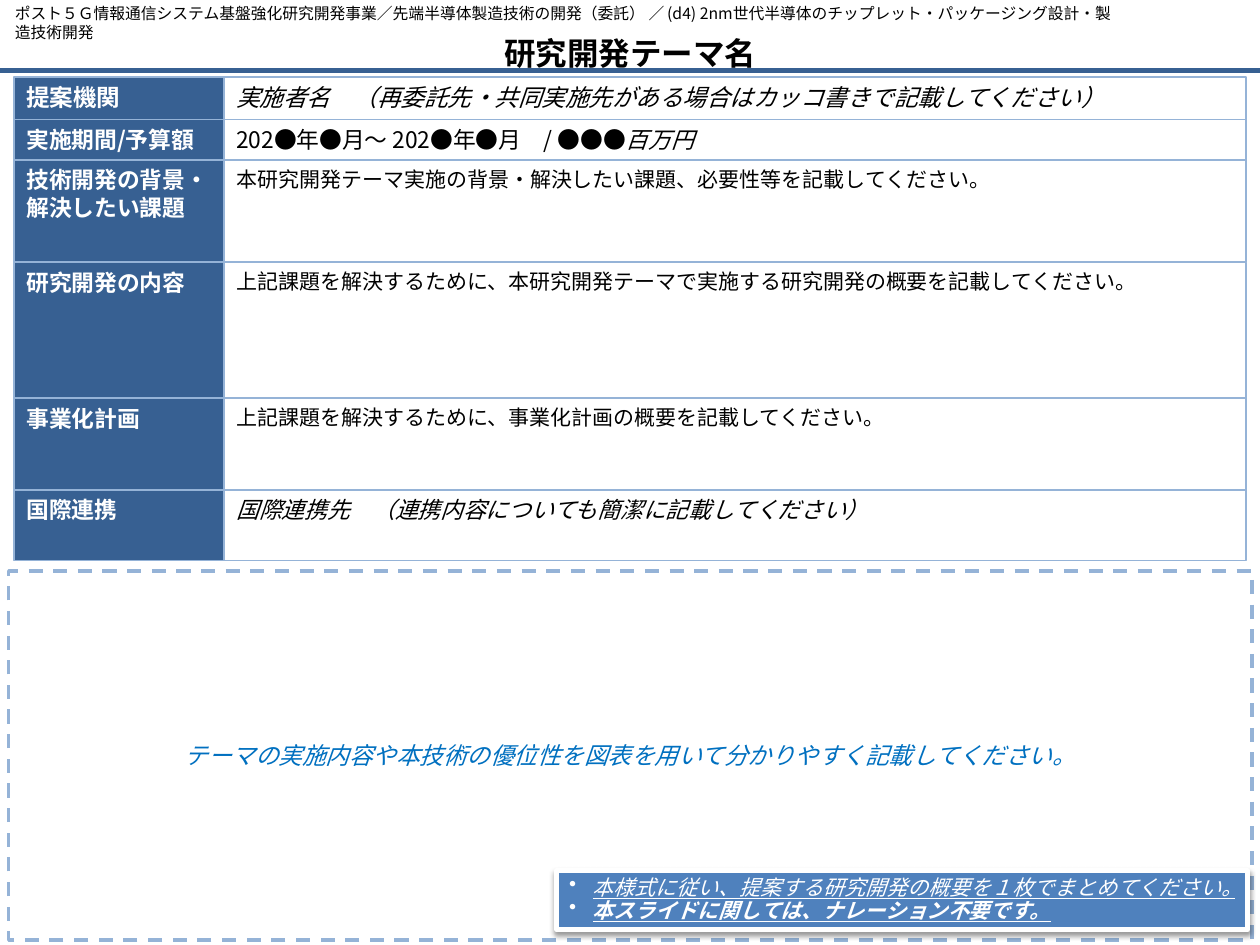
from dataclasses import dataclass

from lxml.etree import SubElement
from pptx import Presentation
from pptx.dml.color import RGBColor
from pptx.enum.dml import MSO_LINE
from pptx.enum.shapes import MSO_CONNECTOR, MSO_SHAPE
from pptx.enum.text import MSO_ANCHOR, PP_ALIGN
from pptx.oxml import parse_xml
from pptx.oxml.ns import nsdecls, qn
from pptx.util import Pt


@dataclass(frozen=True)
class Theme:
    navy: str = "376092"
    pale_blue: str = "95B3D7"
    note_blue: str = "4F81BD"
    hint_blue: str = "0070C0"
    black: str = "000000"
    white: str = "FFFFFF"
    font: str = "Noto Sans CJK JP"
    note_font: str = "Arial"
    title: float = 18
    large: float = 13.5
    label: float = 13
    body: float = 12
    program: float = 9


THEME = Theme()

# Label, value runs as (text, italic), row height, label size, value size
ROWS = [
    ("提案機関", [("実施者名\u3000（再委託先・共同実施先がある場合はカッコ書きで記載してください）", True)],
     24.4, THEME.large, THEME.large),
    ("実施期間/予算額", [("202●年●月～ 202●年●月\u3000/ ●●●", False), ("百万円", True)],
     23, THEME.label, THEME.label),
    ("技術開発の背景・解決したい課題",
     [("本研究開発テーマ実施の背景・解決したい課題、必要性等を記載してください。", False)],
     58.4, THEME.label, THEME.body),
    ("研究開発の内容",
     [("上記課題を解決するために、本研究開発テーマで実施する研究開発の概要を記載してください。", False)],
     77.7, THEME.label, THEME.body),
    ("事業化計画", [("上記課題を解決するために、事業化計画の概要を記載してください。", False)],
     52.5, THEME.label, THEME.body),
    ("国際連携", [("国際連携先\u3000（連携内容についても簡潔に記載してください）", True)],
     40.4, THEME.label, THEME.label),
]
NOTES = [("本様式に従い、提案する研究開発の概要を１枚でまとめてください。", False),
         ("本スライドに関しては、ナレーション不要です。", True)]


def rgb(color):
    return RGBColor.from_string(color)


def style(paragraph, size, color, align=PP_ALIGN.LEFT, face=THEME.font, **flags):
    paragraph.alignment = align
    font = paragraph.font
    font.name, font.size = face, Pt(size)
    font.color.rgb = rgb(color)
    for flag, value in flags.items():
        setattr(font, flag, value)
    # East Asian typeface beside the Latin one
    properties = paragraph._p.pPr.find(qn("a:defRPr"))
    SubElement(properties, qn("a:ea")).set("typeface", THEME.font)


def add_box(slide, x, y, w, h, line, weight, fill=None, anchor=MSO_ANCHOR.TOP):
    box = slide.shapes.add_shape(MSO_SHAPE.RECTANGLE, Pt(x), Pt(y), Pt(w), Pt(h))
    box.shadow.inherit = False
    if fill:
        box.fill.solid()
        box.fill.fore_color.rgb = rgb(fill)
    else:
        box.fill.background()
    box.line.color.rgb = rgb(line)
    box.line.width = Pt(weight)
    box.text_frame.word_wrap = True
    box.text_frame.vertical_anchor = anchor
    return box


def add_header(slide, x, y, w):
    # Programme name
    program = slide.shapes.add_textbox(Pt(x + 1.4), Pt(y - 1.4), Pt(641.5), Pt(18)).text_frame
    program.word_wrap = True
    program.text = ("ポスト５Ｇ情報通信システム基盤強化研究開発事業／先端半導体製造技術の開発（委託） ／ "
                    "(d4) 2nm世代半導体のチップレット・パッケージング設計・製造技術開発")
    style(program.paragraphs[0], THEME.program, THEME.black)

    # Theme title
    title = slide.shapes.title
    title.left, title.top, title.width, title.height = Pt(x), Pt(y + 16), Pt(w), Pt(28.8)
    title.text_frame.text = "研究開発テーマ名"
    title.text_frame.vertical_anchor = MSO_ANCHOR.MIDDLE
    style(title.text_frame.paragraphs[0], THEME.title, THEME.black, PP_ALIGN.CENTER, bold=True)

    # Rule under the title
    rule = slide.shapes.add_connector(
        MSO_CONNECTOR.STRAIGHT, Pt(x), Pt(y + 40.3), Pt(x + w), Pt(y + 40.3))
    rule.line.color.rgb = rgb(THEME.navy)
    rule.line.width = Pt(3)
    SubElement(rule._element.spPr, qn("a:effectLst"))


def add_outline(slide, x, y, w, label_width=120):
    for label, value, height, label_size, value_size in ROWS:
        label_box = add_box(slide, x, y, label_width, height, THEME.pale_blue, 0.75, THEME.navy)
        label_box.text_frame.text = label
        style(label_box.text_frame.paragraphs[0], label_size, THEME.white, bold=True)

        value_box = add_box(slide, x + label_width, y, w - label_width, height,
                            THEME.pale_blue, 0.75)
        paragraph = value_box.text_frame.paragraphs[0]
        style(paragraph, value_size, THEME.black)
        for text, italic in value:
            run = paragraph.add_run()
            run.text, run.font.italic = text, italic
        y += height


def add_figure_area(slide, x, y, w, h):
    area = add_box(slide, x, y, w, h, THEME.pale_blue, 2, anchor=MSO_ANCHOR.MIDDLE)
    area.line.dash_style = MSO_LINE.DASH
    area.text_frame.text = "テーマの実施内容や本技術の優位性を図表を用いて分かりやすく記載してください。"
    style(area.text_frame.paragraphs[0], THEME.large, THEME.hint_blue,
          PP_ALIGN.CENTER, italic=True)


def add_notes_box(slide, x, y, w, h):
    box = add_box(slide, x, y, w, h, THEME.white, 3, THEME.note_blue)
    # Soft shadow below the box
    box._element.spPr.find(qn("a:effectLst")).append(parse_xml(
        f'<a:outerShdw {nsdecls("a")} blurRad="{Pt(3.1)}" dist="{Pt(1.6)}" dir="5400000" '
        f'rotWithShape="0"><a:srgbClr val="{THEME.black}"><a:alpha val="38000"/>'
        '</a:srgbClr></a:outerShdw>'))
    frame = box.text_frame
    frame.text = "\n".join(text for text, _ in NOTES)
    for paragraph, (_, bold) in zip(frame.paragraphs, NOTES):
        style(paragraph, THEME.body, THEME.white, face=THEME.note_font,
              italic=True, underline=True, bold=bold)
        paragraph.line_spacing = Pt(13)
        properties = paragraph._p.pPr
        properties.set("marL", str(Pt(13.5)))
        properties.set("indent", str(-Pt(13.5)))
        bullet = parse_xml(f'<a:buChar {nsdecls("a")} char="•"/>')
        properties.find(qn("a:defRPr")).addprevious(bullet)


def main():
    presentation = Presentation()
    presentation.slide_width, presentation.slide_height = Pt(720), Pt(540)
    slide = presentation.slides.add_slide(presentation.slide_layouts[5])
    add_header(slide, 0, 0, 720)
    add_outline(slide, 8, 44, 704)
    add_figure_area(slide, 5, 326.2, 710.6, 211)
    add_notes_box(slide, 318.2, 497.5, 394.6, 33.8)
    presentation.save("out.pptx")


if __name__ == "__main__":
    main()
